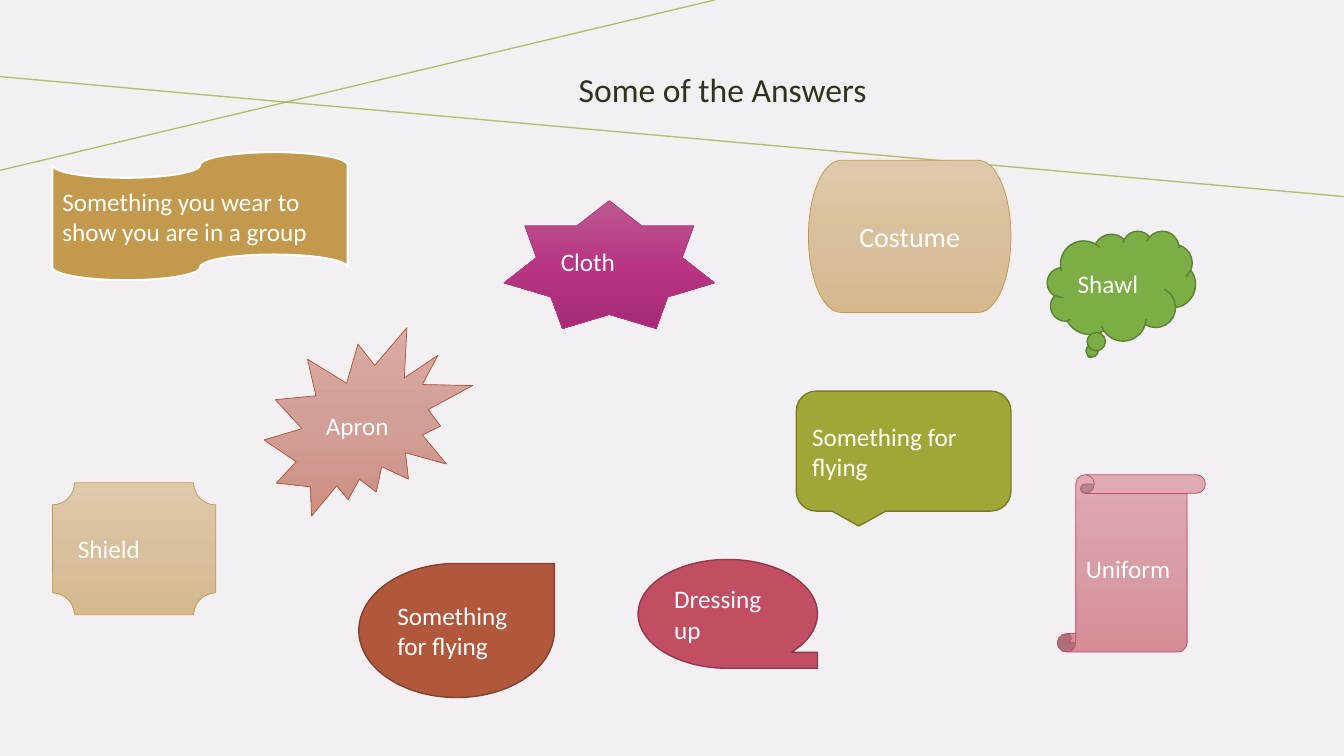
"""Build the "Some of the Answers" slide of labelled shapes."""
from copy import deepcopy

from lxml.etree import SubElement
from pptx import Presentation
from pptx.dml.color import RGBColor
from pptx.enum.shapes import MSO_CONNECTOR, MSO_SHAPE
from pptx.enum.text import MSO_ANCHOR, PP_ALIGN
from pptx.oxml.ns import qn
from pptx.util import Pt

COLOURS = {
    "background": "F2F0F3", "title": "30321C", "white": "FFFFFF",
    "olive": "A0A737", "dark olive": "767C29",
    "green": "7BAE44", "dark green": "5B8132",
    "rose": "C34D62", "dark rose": "903949",
    "rust": "B1573B", "dark rust": "83402C",
    "gold": "C39A4D", "magenta": "B13B82",
}
GRADIENTS = {
    "magenta": ("BC5A90", "B73583", "A82A76"),
    "rose": ("DFABB2", "D99DA5", "D68C95"),
    "gold": ("DFC9AB", "D9C09D", "D6B88C"),
    "rust": ("DAABA3", "D19F96", "CE8E83"),
}
TITLE = "Some of the Answers "
TITLE_AREA = (248.4, 41.76, 383.04, 46.8)
RAYS = [((0, 121.68), (510.48, 0)), ((0, 54.72), (960, 140.4))]
SOLID_ANSWERS = [
    ("Shawl", MSO_SHAPE.CLOUD_CALLOUT, (748.08, 164.88, 105.84, 78.48), "green", "dark green", 1),
    ("Dressing up", MSO_SHAPE.FLOWCHART_SEQUENTIAL_ACCESS_STORAGE,
     (455.76, 399.6, 128.16, 77.76), "rose", "dark rose", 1),
    ("Something you wear to show you are in a group", MSO_SHAPE.FLOWCHART_PUNCHED_TAPE,
     (37.44, 108.72, 210.96, 91.44), "gold", "white", 1.5),
    ("Something for flying", MSO_SHAPE.TEAR,
     (256.32, 402.48, 139.68, 95.76), "rust", "dark rust", 1),
    ("Something for flying", MSO_SHAPE.ROUNDED_RECTANGULAR_CALLOUT,
     (568.8, 279.36, 153.36, 85.68), "olive", "dark olive", 1),
]
GRADIENT_ANSWERS = [
    ("Cloth", MSO_SHAPE.STAR_7_POINT, (360, 143.28, 150.48, 91.44), "magenta", {}),
    ("Uniform", MSO_SHAPE.VERTICAL_SCROLL, (755.28, 339.12, 105.84, 126.72), "rose", {}),
    ("Shield", MSO_SHAPE.PLAQUE, (37.44, 344.88, 116.64, 94.32), "gold", {}),
    ("Apron", MSO_SHAPE.EXPLOSION2, (188.64, 234, 149.04, 134.64), "rust", {}),
    ("Costume", MSO_SHAPE.FLOWCHART_TERMINATOR, (577.44, 114.48, 144.72, 108.72), "gold",
     {"size": 20, "align": PP_ALIGN.CENTER}),
]


def colour(name):
    """Return the named colour."""
    return RGBColor.from_string(COLOURS[name])


def write(box, text, size=18, ink="white", align=PP_ALIGN.LEFT, spacing=1.0):
    """Put formatted text in a box."""
    frame = box.text_frame
    frame.word_wrap = True
    frame.vertical_anchor = MSO_ANCHOR.MIDDLE
    para = frame.paragraphs[0]
    para.alignment = align
    para.line_spacing = spacing
    span = para.add_run()
    span.text = text
    span.font.name = "Calibri"
    span.font.size = Pt(size)
    span.font.color.rgb = colour(ink)


def add_ray(page, start, end):
    """Draw one translucent background line."""
    ray = page.shapes.add_connector(MSO_CONNECTOR.STRAIGHT, *map(Pt, start + end))
    ray.line.width = Pt(1)
    ray.line.color.rgb = colour("olive")
    properties = ray._element.spPr
    tint = properties.find(".//" + qn("a:srgbClr"))
    SubElement(tint, qn("a:alpha"), val="70000")
    SubElement(properties, qn("a:effectLst"))


def add_answer(page, text, kind, area, edge, width, **text_format):
    """Draw one outlined shape with its text and return it."""
    shape = page.shapes.add_shape(kind, *map(Pt, area))
    shape.shadow.inherit = False
    shape.line.color.rgb = colour(edge)
    shape.line.width = Pt(width)
    write(shape, text, **text_format)
    return shape


def fill_gradient(shape, shades):
    """Fill a shape from top to bottom with evenly spaced shades."""
    shape.fill.gradient()
    shape.fill.gradient_angle = 270
    stop_list = shape._element.spPr.find(".//" + qn("a:gsLst"))
    stop_list.insert(1, deepcopy(stop_list[0]))
    for index, (stop, shade) in enumerate(zip(shape.fill.gradient_stops, shades)):
        stop.position = index / (len(shades) - 1)
        stop.color.rgb = RGBColor.from_string(shade)


def main():
    """Assemble and save the deck."""
    deck = Presentation()
    deck.slide_width, deck.slide_height = Pt(960), Pt(540)
    page = deck.slides.add_slide(deck.slide_layouts[6])
    page.background.fill.solid()
    page.background.fill.fore_color.rgb = colour("background")
    title = page.shapes.add_textbox(*map(Pt, TITLE_AREA))
    write(title, TITLE, size=24, ink="title", align=PP_ALIGN.RIGHT, spacing=0.9)
    for start, end in RAYS:
        add_ray(page, start, end)
    for text, kind, area, fill, edge, width in SOLID_ANSWERS:
        shape = add_answer(page, text, kind, area, edge, width)
        shape.fill.solid()
        shape.fill.fore_color.rgb = colour(fill)
    for text, kind, area, hue, text_format in GRADIENT_ANSWERS:
        shape = add_answer(page, text, kind, area, hue, 0.5, **text_format)
        fill_gradient(shape, GRADIENTS[hue])
    deck.save("out.pptx")


if __name__ == "__main__":
    main()
